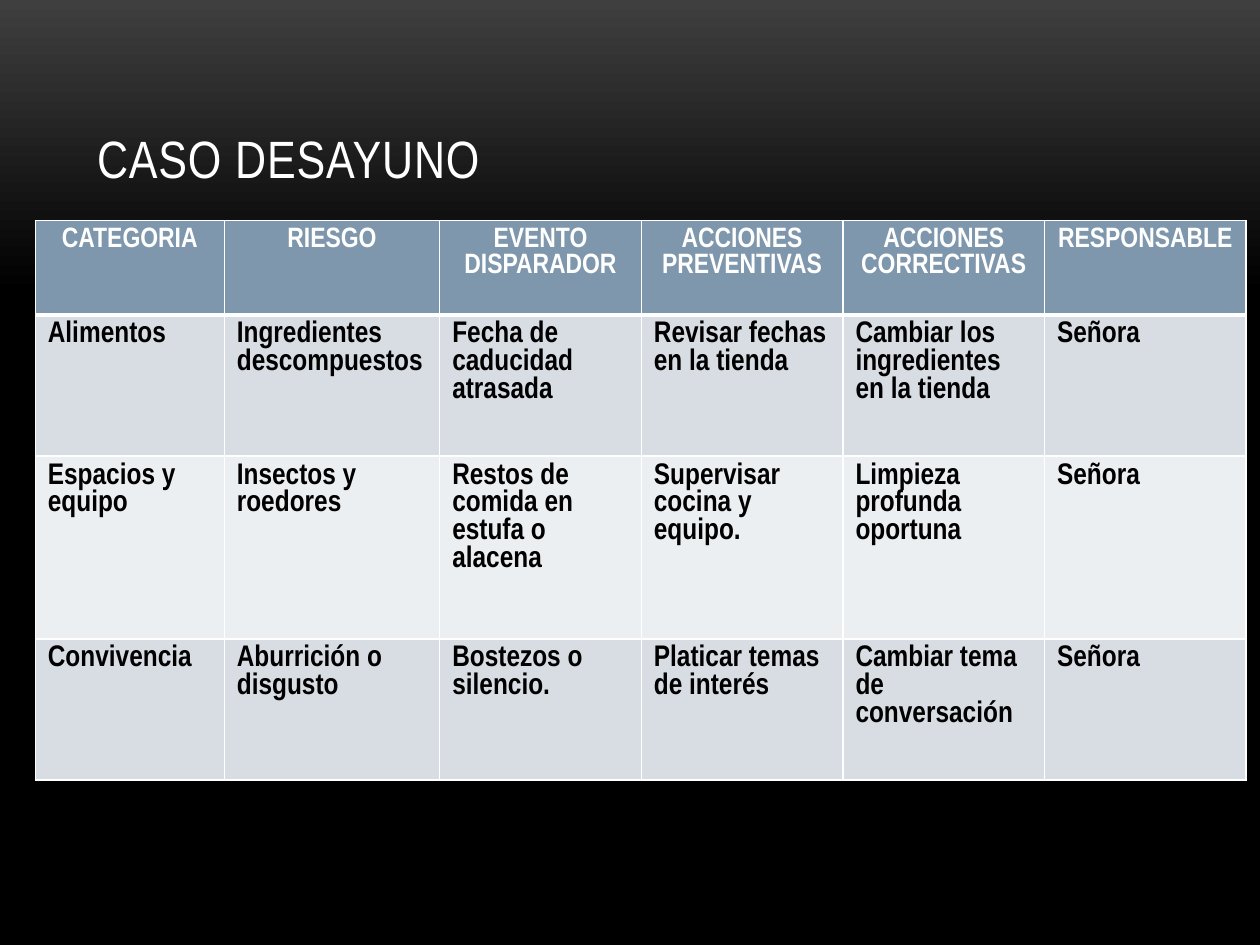
from lxml.etree import SubElement
from pptx import Presentation
from pptx.dml.color import RGBColor
from pptx.enum.text import MSO_ANCHOR, MSO_AUTO_SIZE, PP_ALIGN
from pptx.oxml.ns import qn
from pptx.util import Inches, Pt

FONT = "Arial Narrow"
TITLE = "CASO DESAYUNO"
HEADERS = ["CATEGORIA", "RIESGO", "EVENTO\nDISPARADOR", "ACCIONES\nPREVENTIVAS",
           "ACCIONES CORRECTIVAS", "RESPONSABLE"]
RISKS = [
    ["Alimentos", "Ingredientes descompuestos", "Fecha de caducidad atrasada",
     "Revisar fechas en la tienda", "Cambiar los ingredientes en la tienda", "Señora"],
    ["Espacios y equipo", "Insectos y roedores", "Restos de comida en estufa o alacena",
     "Supervisar cocina y equipo.", "Limpieza profunda oportuna", "Señora"],
    ["Convivencia", "Aburrición o disgusto", "Bostezos o silencio.",
     "Platicar temas de interés", "Cambiar tema de conversación", "Señora"],
]
COLUMN_WIDTHS = [1.5, 1.71, 1.6, 1.6, 1.6, 1.6]
ROW_HEIGHTS = [0.75, 1.12, 1.45, 1.12]
HEADER_FILL = "7E97AD"
BAND_FILLS = ["D8DDE3", "ECEFF1"]
BACKGROUND_STOPS = [("3F3F3F", 0), ("000000", 0.31)]


def color(value):
    return RGBColor.from_string(value)


def style_font(paragraph, size, ink, bold):
    font = paragraph.font
    font.name, font.size, font.bold = FONT, Pt(size), bold
    font.color.rgb = color(ink)


def add_borders(cell, widths):
    properties = cell._tc.get_or_add_tcPr()
    for side, width in zip("LRTB", widths):
        line = SubElement(properties, qn(f"a:ln{side}"), w=str(Pt(width)))
        SubElement(SubElement(line, qn("a:solidFill")), qn("a:srgbClr"), val="FFFFFF")


def fill_cell(cell, text, row):
    is_header = row == 0
    add_borders(cell, [1, 1, 3 if row == 1 else 1, 3 if is_header else 1])
    cell.fill.solid()
    cell.fill.fore_color.rgb = color(HEADER_FILL if is_header else BAND_FILLS[(row - 1) % 2])
    cell.text = text
    for paragraph in cell.text_frame.paragraphs:
        paragraph.alignment = PP_ALIGN.CENTER if is_header else PP_ALIGN.LEFT
        style_font(paragraph, 16 if is_header else 17, "FFFFFF" if is_header else "000000", True)


def main():
    deck = Presentation()
    deck.slide_width, deck.slide_height = Inches(10), Inches(7.5)
    slide = deck.slides.add_slide(deck.slide_layouts[5])

    background = slide.background.fill
    background.gradient()
    background.gradient_angle = 270
    for stop, (shade, position) in zip(background.gradient_stops, BACKGROUND_STOPS):
        stop.color.rgb = color(shade)
        stop.position = position

    title = slide.shapes.title
    title.left, title.top = Inches(0.67), Inches(0.3)
    title.width, title.height = Inches(8.67), Inches(1.25)
    title.text = TITLE
    title.text_frame.auto_size = MSO_AUTO_SIZE.NONE
    title.text_frame.vertical_anchor = MSO_ANCHOR.BOTTOM
    heading = title.text_frame.paragraphs[0]
    heading.alignment = PP_ALIGN.LEFT
    style_font(heading, 30, "FFFFFF", False)
    heading.runs[0].font._element.set("spc", "50")

    rows = [HEADERS, *RISKS]
    table = slide.shapes.add_table(
        len(rows), len(HEADERS), Inches(0.28), Inches(1.75),
        Inches(sum(COLUMN_WIDTHS)), Inches(sum(ROW_HEIGHTS))).table
    for column, width in zip(table.columns, COLUMN_WIDTHS):
        column.width = Inches(width)
    for row, height in zip(table.rows, ROW_HEIGHTS):
        row.height = Inches(height)
    for row, texts in enumerate(rows):
        for column, text in enumerate(texts):
            fill_cell(table.cell(row, column), text, row)

    deck.save("out.pptx")


if __name__ == "__main__":
    main()
